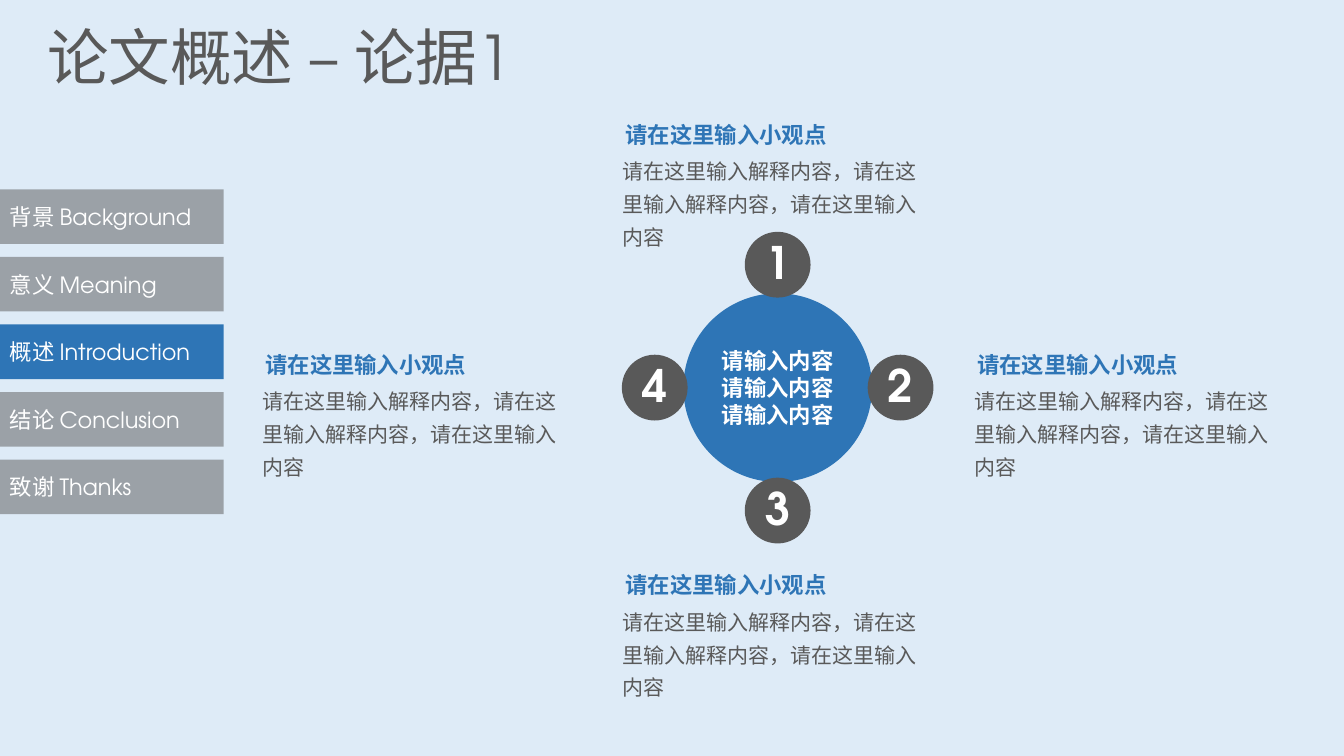
from lxml import etree
from pptx import Presentation
from pptx.dml.color import RGBColor
from pptx.enum.shapes import MSO_SHAPE
from pptx.enum.text import MSO_ANCHOR, MSO_AUTO_SIZE, PP_ALIGN
from pptx.oxml.ns import qn
from pptx.util import Pt

RECTANGLE, ELLIPSE = MSO_SHAPE.RECTANGLE, MSO_SHAPE.OVAL
LEFT, CENTER = PP_ALIGN.LEFT, PP_ALIGN.CENTER
MIDDLE = MSO_ANCHOR.MIDDLE
GROW = MSO_AUTO_SIZE.SHAPE_TO_FIT_TEXT

COLORS = {"background": "DEEBF7", "gray": "595959", "blue": "2E75B6", "white": "FFFFFF"}
FONT = "TeX Gyre Adventor"

NAVIGATION = ["背景 Background", "意义 Meaning", "概述 Introduction", "结论 Conclusion", "致谢 Thanks"]
CURRENT = "概述 Introduction"
NAVIGATION_TOP, NAVIGATION_STEP = 135.3, 48.25

HUB_X, HUB_Y, HUB_SIZE = 555.5, 276.9, 134.8
BADGE_SIZE, ORBIT = 47, 87.8
DIRECTIONS = [(0, -1), (1, 0), (0, 1), (-1, 0)]

POINT_HEADING = "请在这里输入小观点"
POINT_BODY = "请在这里输入解释内容，请在这里输入解释内容，请在这里输入内容"
POINT_POSITIONS = [(437.8, 77), (689, 241.3), (437.8, 399), (180.5, 241.3)]


def color(name):
    return RGBColor.from_string(COLORS[name])


def write(shape, lines, size, color_name, bold=False, align=LEFT, spacing=1.0):
    frame = shape.text_frame
    frame.word_wrap = True
    for index, line in enumerate(lines):
        paragraph = frame.paragraphs[0] if index == 0 else frame.add_paragraph()
        paragraph.alignment = align
        paragraph.line_spacing = spacing
        run = paragraph.add_run()
        run.text = line
        run.font.name = FONT
        run.font.size = Pt(size)
        run.font.bold = bold
        run.font.color.rgb = color(color_name)


def add_label(slide, box, text, size, color_name, bold=False, spacing=1.3):
    label = slide.shapes.add_textbox(*map(Pt, box))
    write(label, [text], size, color_name, bold, spacing=spacing)
    return label


def add_filled_shape(shapes, kind, box, fill_name, alpha=100):
    """Add a borderless shape; alpha is its opacity in percent."""
    shape = shapes.add_shape(kind, *map(Pt, box))
    shape.shadow.inherit = False
    shape.fill.solid()
    shape.fill.fore_color.rgb = color(fill_name)
    shape.line.fill.background()
    shape.text_frame.vertical_anchor = MIDDLE
    if alpha < 100:
        fill_color = shape.fill._xPr.find(".//" + qn("a:srgbClr"))
        etree.SubElement(fill_color, qn("a:alpha"), val=str(alpha * 1000))
    return shape


def add_circle(shapes, center_x, center_y, diameter, fill_name, inset):
    box = (center_x - diameter / 2, center_y - diameter / 2, diameter, diameter)
    circle = add_filled_shape(shapes, ELLIPSE, box, fill_name)
    frame = circle.text_frame
    frame.margin_left = frame.margin_right = Pt(inset)
    frame.margin_top = frame.margin_bottom = Pt(inset)
    return circle


def add_cycle(slide):
    shapes = slide.shapes.add_group_shape().shapes
    hub = add_circle(shapes, HUB_X, HUB_Y, HUB_SIZE, "blue", 1.5)
    write(hub, ["请输入内容"] * 3, 16, "white", True, CENTER)
    for number, (x, y) in enumerate(DIRECTIONS, start=1):
        badge = add_circle(shapes, HUB_X + x * ORBIT, HUB_Y + y * ORBIT, BADGE_SIZE, "gray", 3)
        write(badge, [str(number)], 32, "white", True, CENTER, 0.9)


def add_point(slide, left, top):
    heading = add_label(slide, (left + 2, top, 232, 32), POINT_HEADING, 16, "blue", True)
    body = add_label(slide, (left, top + 27.4, 232, 77), POINT_BODY, 15, "gray")
    for label in (heading, body):
        label.text_frame.auto_size = GROW


def add_navigation(slide):
    for index, text in enumerate(NAVIGATION):
        box = (0, NAVIGATION_TOP + index * NAVIGATION_STEP, 159.7, 39)
        if text == CURRENT:
            bar = add_filled_shape(slide.shapes, RECTANGLE, box, "blue")
        else:
            bar = add_filled_shape(slide.shapes, RECTANGLE, box, "gray", 50)
        write(bar, [text], 16, "white")


def main():
    presentation = Presentation()
    presentation.slide_width, presentation.slide_height = Pt(960), Pt(540)
    slide = presentation.slides.add_slide(presentation.slide_layouts[6])
    slide.background.fill.solid()
    slide.background.fill.fore_color.rgb = color("background")

    add_label(slide, (26.6, 15.8, 828, 57.6), "论文概述 – 论据1", 44, "gray", spacing=0.9)
    add_cycle(slide)
    for left, top in POINT_POSITIONS:
        add_point(slide, left, top)
    add_navigation(slide)
    presentation.save("out.pptx")


if __name__ == "__main__":
    main()
